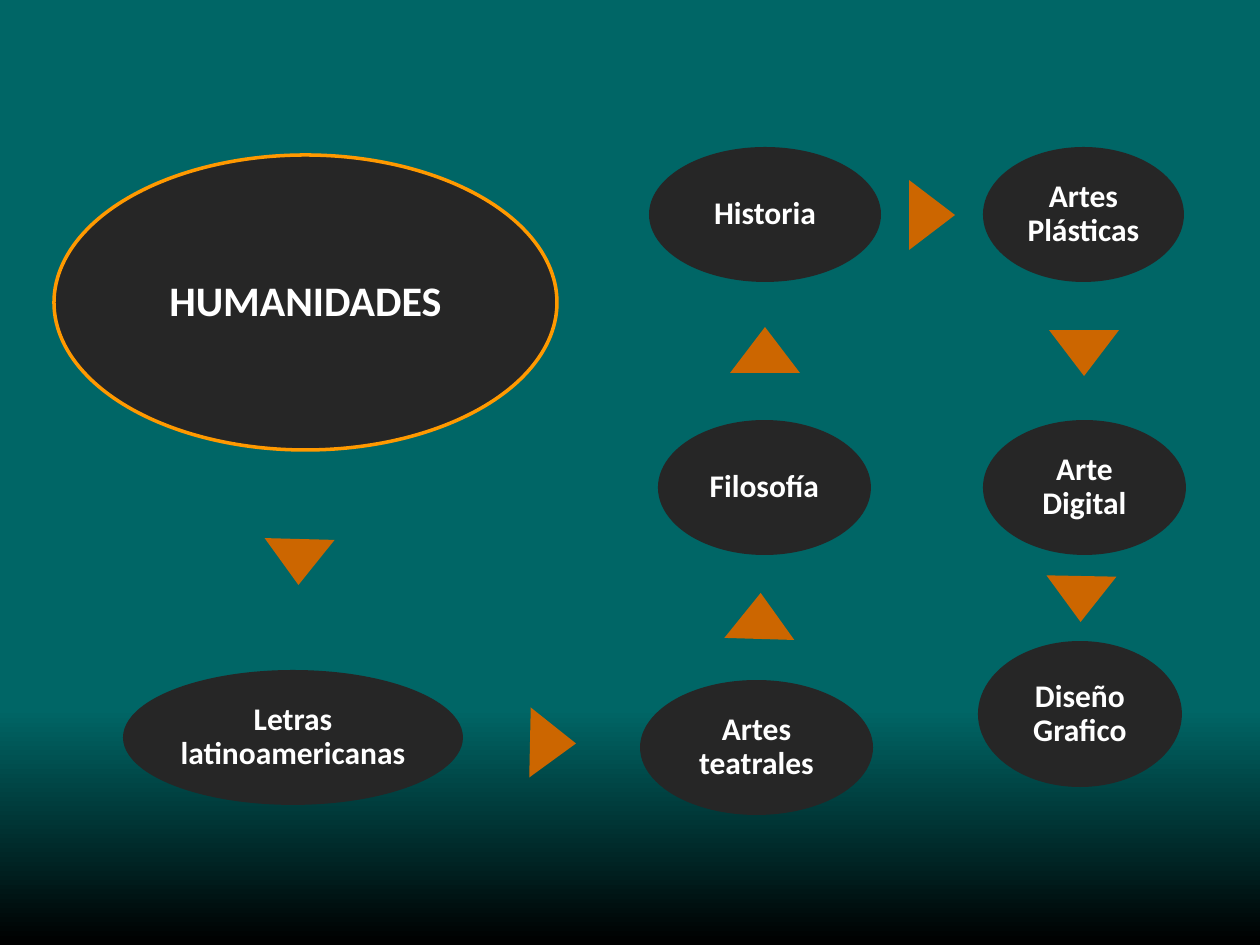
from copy import deepcopy
from pptx import Presentation
from pptx.dml.color import RGBColor
from pptx.enum.shapes import MSO_SHAPE
from pptx.enum.text import MSO_ANCHOR, PP_ALIGN
from pptx.oxml.ns import qn
from pptx.util import Pt

SCALE = 914400 / 126
TEAL, BLACK, DARK = "006666", "000000", "262626"
WHITE, AMBER, RUST = "FFFFFF", "FF9900", "CC6600"


def px(n):
    return round(n * SCALE)


def tint(part, code):
    part.rgb = RGBColor.from_string(code)


def shade(slide):
    fill = slide.background.fill
    fill.gradient()
    fill.gradient_angle = 270
    first, last = fill.gradient_stops
    tint(first.color, TEAL)
    tint(last.color, BLACK)
    first.position, last.position = 0, 1
    stops = slide.element.find(".//" + qn("a:gsLst"))
    for spot, pos in enumerate((25000, 75000), 1):
        stop = deepcopy(stops[0])
        stop.set("pos", str(pos))
        stops.insert(spot, stop)


def draw(slide, kind, box, color):
    shape = slide.shapes.add_shape(kind, *map(px, box))
    shape.shadow.inherit = False
    shape.fill.solid()
    tint(shape.fill.fore_color, color)
    shape.line.fill.background()
    return shape


def label(shape, text, size):
    frame = shape.text_frame
    frame.word_wrap = True
    frame.vertical_anchor = MSO_ANCHOR.MIDDLE
    frame.margin_left = frame.margin_right = px(4)
    frame.margin_top = frame.margin_bottom = px(4)
    para = frame.paragraphs[0]
    para.alignment = PP_ALIGN.CENTER
    para.line_spacing = 0.9
    run = para.add_run()
    run.text = text
    run.font.name = "Calibri"
    run.font.size = Pt(size)
    run.font.bold = True
    tint(run.font.color, WHITE)


def oval(slide, box, text, size=18):
    shape = draw(slide, MSO_SHAPE.OVAL, box, DARK)
    label(shape, text, size)
    return shape


def wedge(slide, x, y, turn, wide=70, high=46):
    box = (x - wide / 2, y - high / 2, wide, high)
    draw(slide, MSO_SHAPE.ISOSCELES_TRIANGLE, box, RUST).rotation = turn


def column(slide, box, nodes, marks):
    left, top = box
    for x, y, wide, high, text in nodes:
        oval(slide, (left + x, top + y, wide, high), text)
    for x, y, turn in marks:
        wedge(slide, left + x, top + y, turn)


def title(slide, box, text):
    shape = oval(slide, box, text, 24)
    tint(shape.line.color, AMBER)
    shape.line.width = Pt(2)


def main():
    deck = Presentation()
    deck.slide_width, deck.slide_height = px(1260), px(945)
    slide = deck.slides.add_slide(deck.slide_layouts[6])
    shade(slide)
    title(slide, (54, 155, 503, 295), "HUMANIDADES")
    column(
        slide, (54, 155),
        [(69, 515, 340, 135, "Letras latinoamericanas")],
        [(245, 407, 181.5), (499, 588, 91.2)],
    )
    column(
        slide, (640, 147),
        [
            (0, 533, 233, 135, "Artes teatrales"),
            (18, 273, 213, 135, "Filosofía"),
            (9, 0, 232, 135, "Historia"),
        ],
        [(120, 469, 1.7), (125, 203, 0), (292, 68, 90)],
    )
    column(
        slide, (978, 147),
        [
            (5, 0, 201, 135, "Artes Plásticas"),
            (5, 273, 203, 135, "Arte Digital"),
            (0, 494, 204, 146, "Diseño Grafico"),
        ],
        [(106, 206, 180), (103, 452, 181.1)],
    )
    deck.save("out.pptx")


if __name__ == "__main__":
    main()
